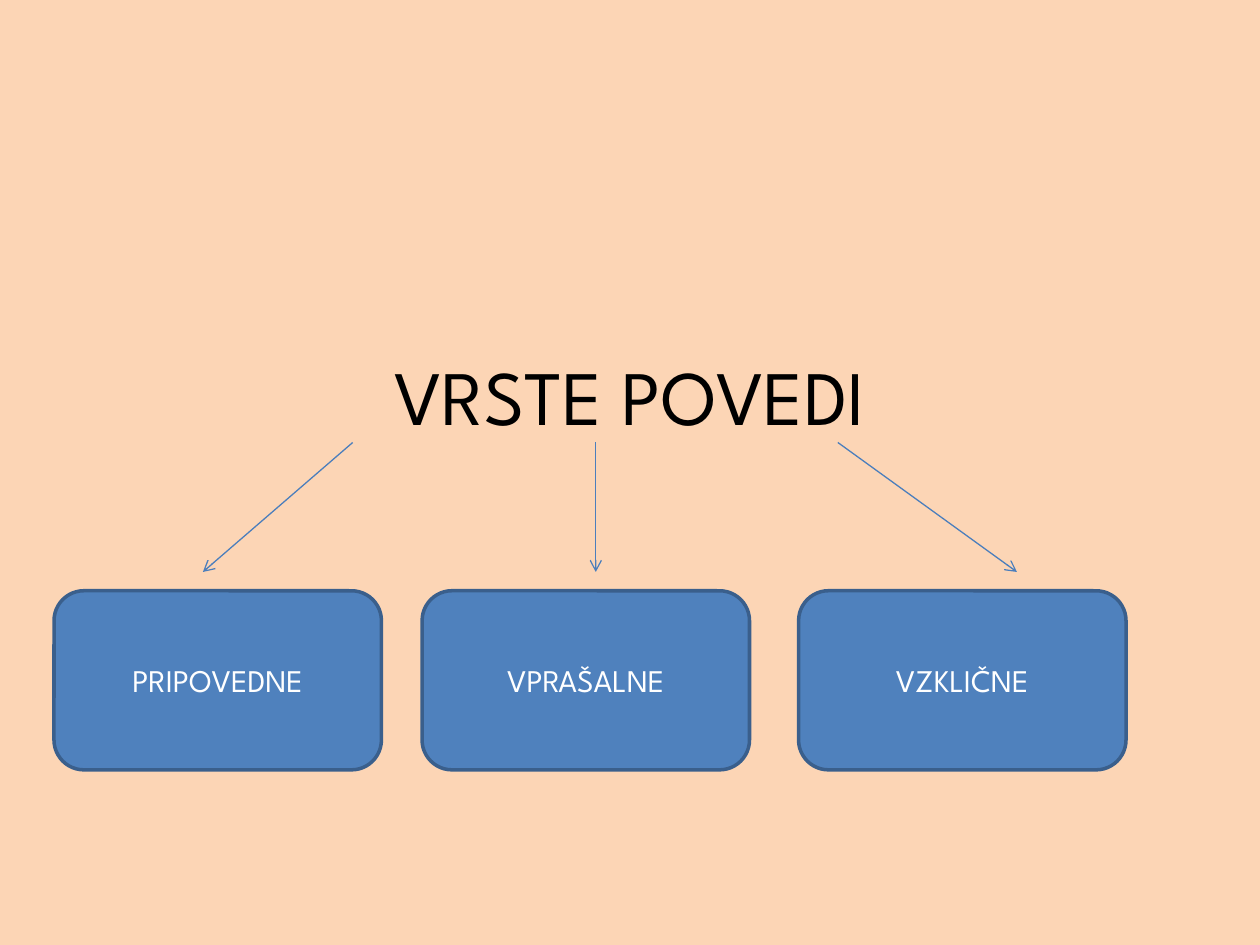
from pptx import Presentation
from pptx.dml.color import RGBColor
from pptx.enum.shapes import MSO_CONNECTOR, MSO_SHAPE
from pptx.enum.text import MSO_ANCHOR, PP_ALIGN
from pptx.oxml.ns import qn
from pptx.util import Cm, Pt
from lxml.etree import SubElement

PEACH = RGBColor(0xFC, 0xD5, 0xB5)
BLUE = RGBColor(0x4F, 0x81, 0xBD)
EDGE = RGBColor(0x3A, 0x5F, 0x8C)
ARROW = RGBColor(0x4B, 0x7E, 0xBC)
BLACK = RGBColor(0, 0, 0)
WHITE = RGBColor(0xFF, 0xFF, 0xFF)
FONT = "League Spartan"

# Each kind: label, box left, arrow start and arrow end, in cm from the left
KINDS = [
    ("PRIPOVEDNE", 0, 6.02, 3),
    ("VPRAŠALNE", 7.42, 10.92, 10.92),
    ("VZKLIČNE", 15.01, 15.8, 19.41),
]


def write(shape, text, size, color):
    frame = shape.text_frame
    frame.word_wrap = True
    frame.vertical_anchor = MSO_ANCHOR.MIDDLE
    para = frame.paragraphs[0]
    para.text = text
    para.alignment = PP_ALIGN.CENTER
    para.font.name = FONT
    para.font.size = Pt(size)
    para.font.color.rgb = color


def add_title(slide, left, top, width, height):
    box = slide.shapes.add_textbox(Cm(left), Cm(top), Cm(width), Cm(height))
    write(box, "VRSTE POVEDI", 44, BLACK)


def add_box(slide, label, left, top, width, height):
    box = slide.shapes.add_shape(
        MSO_SHAPE.ROUNDED_RECTANGLE, Cm(left), Cm(top), Cm(width), Cm(height))
    box.shadow.inherit = False
    box.fill.solid()
    box.fill.fore_color.rgb = BLUE
    box.line.color.rgb = EDGE
    box.line.width = Pt(2)
    write(box, label, 18, WHITE)


def add_arrow(slide, x1, y1, x2, y2):
    arrow = slide.shapes.add_connector(
        MSO_CONNECTOR.STRAIGHT, Cm(x1), Cm(y1), Cm(x2), Cm(y2))
    arrow.line.color.rgb = ARROW
    arrow.line.width = Pt(0.75)
    SubElement(arrow.line._get_or_add_ln(), qn("a:tailEnd"), type="arrow")
    SubElement(arrow._element.spPr, qn("a:effectLst"))


def add_kinds(slide, left, top):
    """Place the arrows from the title and the boxes they lead to."""
    for label, x, start, end in KINDS:
        add_arrow(slide, left + start, top, left + end, top + 2.61)
        add_box(slide, label, left + x, top + 2.99, 6.6, 3.61)


def main():
    deck = Presentation()
    deck.slide_width, deck.slide_height = Cm(25.4), Cm(19.05)
    slide = deck.slides.add_slide(deck.slide_layouts[6])
    slide.background.fill.solid()
    slide.background.fill.fore_color.rgb = PEACH
    add_title(slide, 1.9, 5.92, 21.6, 4.08)
    add_kinds(slide, 1.09, 8.92)
    deck.save("out.pptx")


if __name__ == "__main__":
    main()
